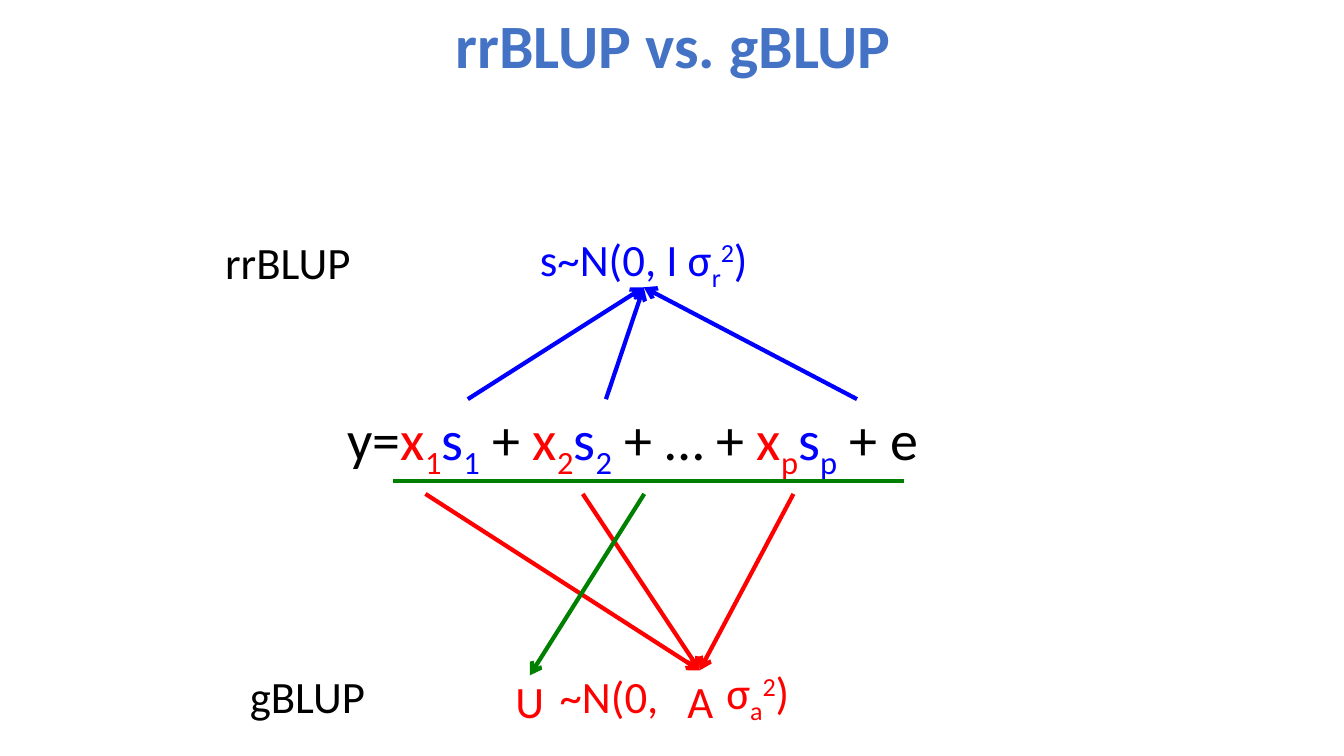
from lxml import etree
from pptx import Presentation
from pptx.dml.color import RGBColor
from pptx.enum.shapes import MSO_CONNECTOR
from pptx.enum.text import MSO_ANCHOR, PP_ALIGN
from pptx.oxml.ns import qn
from pptx.util import Inches, Pt

STRAIGHT = MSO_CONNECTOR.STRAIGHT
MIDDLE, TOP = MSO_ANCHOR.MIDDLE, MSO_ANCHOR.TOP
CENTER, LEFT = PP_ALIGN.CENTER, PP_ALIGN.LEFT
SUB, SUPER = -25000, 30000
BOTTOM_SIDE, TOP_SIDE = 2, 0
COLORS = {"title": "4472C4", "black": "000000", "red": "FF0000",
          "blue": "0000FF", "green": "008000"}

prs = Presentation()
prs.slide_width, prs.slide_height = Inches(13.33), Inches(7.5)
s = prs.slides.add_slide(prs.slide_layouts[6])


def add_text(x, y, w, h, runs, size=32, bold=False, align=CENTER, anchor=MIDDLE):
    """Add a text box; each run is (text, color, baseline shift)."""
    sp = s.shapes.add_textbox(Inches(x), Inches(y), Inches(w), Inches(h))
    tf = sp.text_frame
    tf.word_wrap = True
    tf.vertical_anchor = anchor
    p = tf.paragraphs[0]
    p.alignment = align
    for text, color, shift in runs:
        r = p.add_run()
        r.text = text
        r.font.name = "Calibri"
        r.font.size = Pt(size)
        r.font.bold = bold
        r.font.color.rgb = RGBColor.from_string(COLORS[color])
        if shift:
            r.font._element.set("baseline", str(shift))
    return sp


def add_line(start, end, color, arrow=True):
    """Add a 3 pt line, with an open arrowhead at its end if wanted."""
    cxn = s.shapes.add_connector(STRAIGHT, *(Inches(v) for v in start + end))
    cxn.line.width = Pt(3)
    cxn.line.color.rgb = RGBColor.from_string(COLORS[color])
    if arrow:
        etree.SubElement(cxn.line._get_or_add_ln(), qn("a:tailEnd"), type="arrow")
    etree.SubElement(cxn._element.spPr, qn("a:effectLst"))
    return cxn


# Title
title = add_text(0.93, -0.24, 11.5, 1.45, [("rrBLUP vs. gBLUP", "title", 0)], 44, True)
title.text_frame.paragraphs[0].line_spacing = 0.9

# Model equation
equation = [("y=", "black", 0)]
for index, joiner in (("1", " + "), ("2", " + … + "), ("p", " + e")):
    equation += [("x", "red", 0), (index, "red", SUB),
                 ("s", "blue", 0), (index, "blue", SUB), (joiner, "black", 0)]
add_text(3.35, 3.96, 7.4, 0.77, equation, 40, align=LEFT, anchor=TOP)

# Method labels
add_text(1.92, 2.35, 1.87, 0.5, [("rrBLUP", "black", 0)])
add_text(2.17, 6.65, 1.76, 0.5, [("gBLUP", "black", 0)])

# rrBLUP: marker effects share one distribution
effects = add_text(4.81, 2.35, 3.15, 0.5, [
    ("s~N(0, I σ", "blue", 0), ("r", "blue", SUB), ("2", "blue", SUPER), (")", "blue", 0)])
for x in (4.64, 6.01, 8.5):
    add_line((x, 3.96), (6.39, 2.85), "blue").end_connect(effects, BOTTOM_SIDE)

# gBLUP: markers build the relationship matrix
distribution = add_text(5, 6.65, 1.68, 0.5, [("~N(0,", "red", 0)])
distribution.text_frame.margin_left = Inches(0.5)
breeding_value = add_text(4.87, 6.7, 0.77, 0.5, [("U", "red", 0)])
add_text(6.59, 6.7, 0.71, 0.5, [("A", "red", 0)])
add_text(6.94, 6.65, 1.15, 0.5, [
    ("σ", "red", 0), ("a", "red", SUB), ("2", "red", SUPER), (")", "red", 0)])
for x in (7.87, 5.78, 4.22):
    add_line((x, 4.9), (6.94, 6.65), "red")

# Underlined sum of effects leads to U
add_line((3.9, 4.77), (8.97, 4.77), "green", arrow=False)
add_line((6.39, 4.9), (5.25, 6.7), "green").end_connect(breeding_value, TOP_SIDE)

prs.save("out.pptx")
